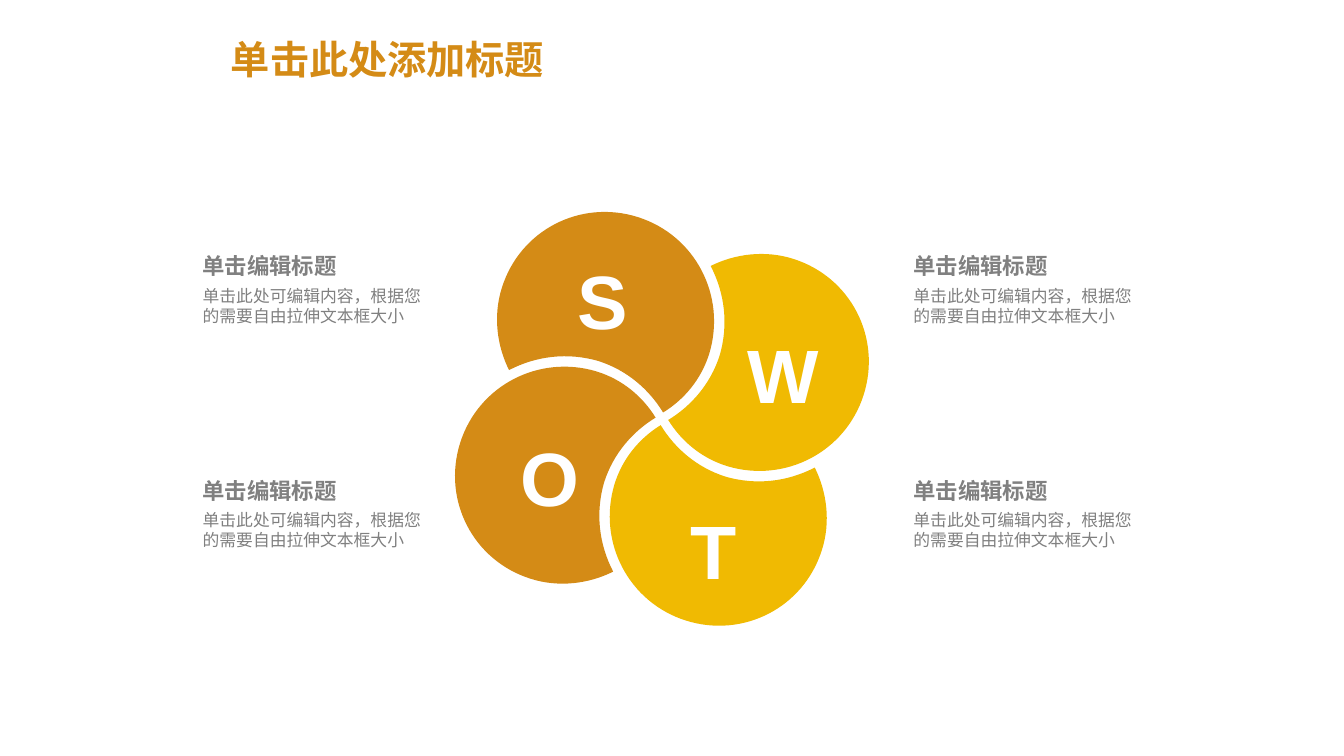
from math import cos, radians, sin

from lxml.etree import SubElement
from pptx import Presentation
from pptx.dml.color import RGBColor
from pptx.enum.text import MSO_ANCHOR as Anchor, MSO_AUTO_SIZE as Fit, PP_ALIGN as Align
from pptx.oxml.ns import qn
from pptx.util import Inches, Pt

ORANGE = RGBColor(0xD4, 0x8B, 0x16)
YELLOW = RGBColor(0xF0, 0xBA, 0x02)
GRAY = RGBColor(0x80, 0x80, 0x80)
WHITE = RGBColor(0xFF, 0xFF, 0xFF)

TITLE = "单击此处添加标题"
HEAD = "单击编辑标题"
BODY = "单击此处可编辑内容，根据您的需要自由拉伸文本框大小"
COLORS = (ORANGE, ORANGE, YELLOW, YELLOW)
MARKS = [("S", 5.26, 2.45), ("T", 6.36, 4.93), ("W", 7.05, 3.18), ("O", 4.73, 4.21)]
COLS = (2.01, 9.06)
ROWS = (2.5, 4.73)

HUB = (6.565, 4.155)
OFFSET = (-0.535, -1.075)
SIZE = (2.28, 2.32)
TILT = 323.3
START = (-0.09, 0.5)
CURVES = [
    ((0.19, 0.59), (0.41, 0.78), (0.55, 1.01)),
    ((0.76, 0.88), (0.93, 0.68), (1.01, 0.42)),
    ((1.18, -0.15), (0.87, -0.75), (0.3, -0.93)),
    ((-0.27, -1.11), (-0.87, -0.8), (-1.05, -0.23)),
    ((-1.14, 0.05), (-1.1, 0.35), (-0.98, 0.59)),
    ((-0.71, 0.45), (-0.4, 0.41), START),
]


def spin(dot, turn):
    x, y = dot
    turn = radians(turn)
    return x * cos(turn) - y * sin(turn), x * sin(turn) + y * cos(turn)


def bend(shape):
    lines = list(shape.element.iter(qn("a:lnTo")))
    for i in range(0, len(lines), 3):
        curve = SubElement(lines[i].getparent(), qn("a:cubicBezTo"))
        lines[i].addprevious(curve)
        for line in lines[i:i + 3]:
            curve.append(line[0])
            line.getparent().remove(line)


def add_petal(slide, turn, color):
    dots = [START] + [dot for curve in CURVES for dot in curve]
    dots = [tuple(map(Inches, spin(dot, -TILT))) for dot in dots]
    form = slide.shapes.build_freeform(*dots[0], scale=1.0)
    form.add_line_segments(dots[1:], close=True)
    petal = form.convert_to_shape()
    bend(petal)
    x, y = spin(OFFSET, turn)
    petal.width, petal.height = map(Inches, SIZE)
    petal.left = Inches(HUB[0] + x - SIZE[0] / 2)
    petal.top = Inches(HUB[1] + y - SIZE[1] / 2)
    petal.rotation = (TILT + turn) % 360
    petal.shadow.inherit = False
    petal.fill.solid()
    petal.fill.fore_color.rgb = color
    petal.line.fill.background()


def style(part, size, color, bold, face="Arial"):
    font = part.runs[0].font
    font.name = face
    font.size = Pt(size)
    font.bold = bold
    font.color.rgb = color


def add_text(slide, text, box, size, color, bold, pad=(0, 0), align=Align.LEFT):
    frame = slide.shapes.add_textbox(*map(Inches, box)).text_frame
    frame.text = text
    frame.word_wrap = True
    frame.auto_size = Fit.SHAPE_TO_FIT_TEXT
    frame.margin_left = frame.margin_right = Inches(pad[0])
    frame.margin_top = frame.margin_bottom = Inches(pad[1])
    part = frame.paragraphs[0]
    part.alignment = align
    style(part, size, color, bold)


def add_title(slide):
    title = slide.shapes.title
    title.left, title.top, title.width, title.height = map(Inches, (2.19, 0.34, 11.5, 0.54))
    frame = title.text_frame
    frame.text = TITLE
    frame.vertical_anchor = Anchor.MIDDLE
    part = frame.paragraphs[0]
    part.alignment = Align.LEFT
    part.line_spacing = 0.9
    style(part, 28, ORANGE, True, "Montserrat")


def main():
    deck = Presentation()
    deck.slide_width = Inches(13.33)
    deck.slide_height = Inches(7.5)
    slide = deck.slides.add_slide(deck.slide_layouts[5])
    add_title(slide)
    for i, color in enumerate(COLORS):
        add_petal(slide, i * 90 - 90, color)
    for mark, x, y in MARKS:
        add_text(slide, mark, (x, y, 1.44, 1.04), 54, WHITE, True, (0.13, 0.07), Align.CENTER)
    for x in COLS:
        for y in ROWS:
            add_text(slide, HEAD, (x, y, 2.56, 0.27), 16, GRAY, True)
            add_text(slide, BODY, (x, y + 0.33, 2.22, 0.4), 12, GRAY, False)
    deck.save("out.pptx")


if __name__ == "__main__":
    main()
